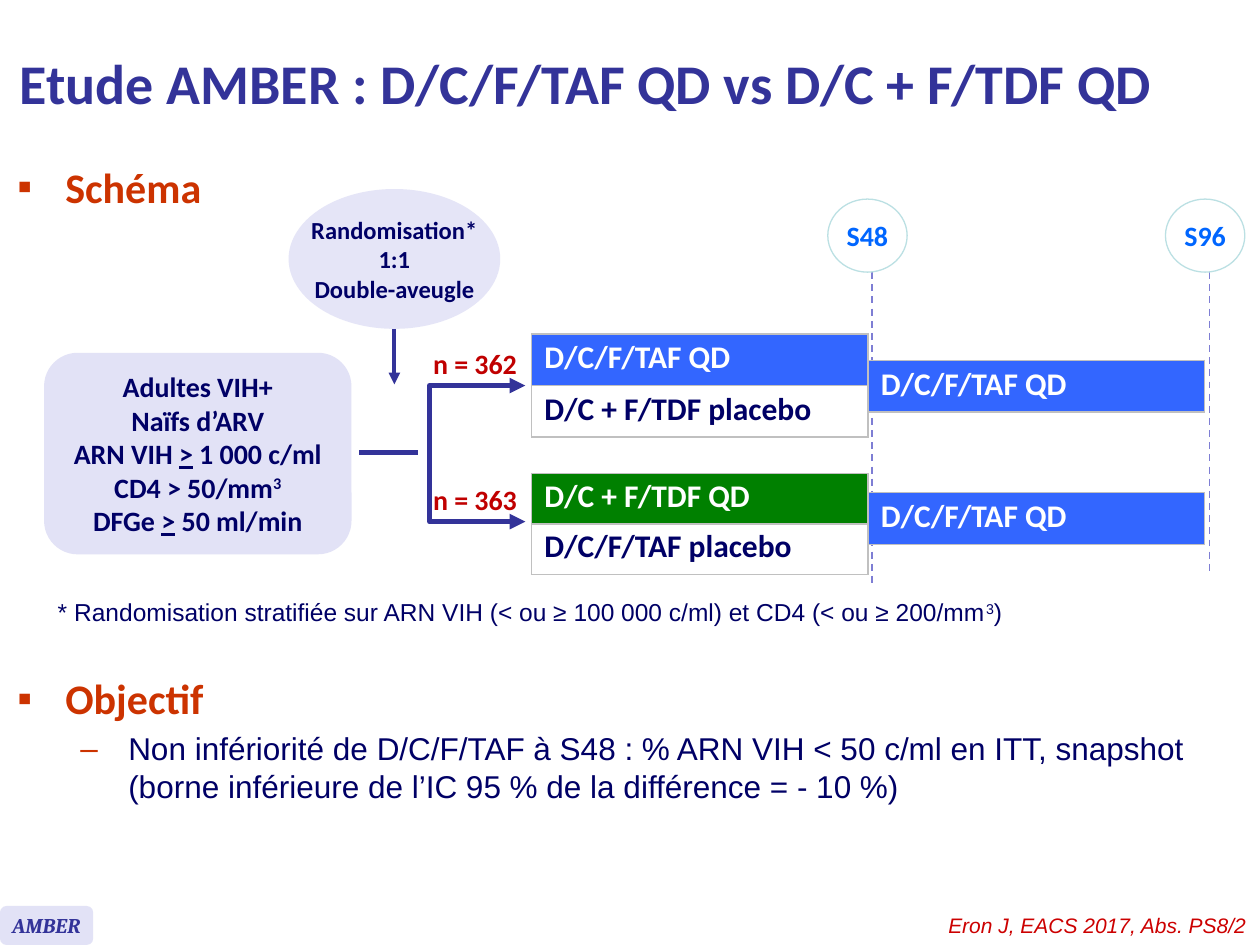
from lxml.etree import SubElement
from pptx import Presentation
from pptx.dml.color import RGBColor
from pptx.enum.dml import MSO_LINE
from pptx.enum.shapes import MSO_CONNECTOR, MSO_SHAPE
from pptx.enum.text import MSO_ANCHOR, PP_ALIGN
from pptx.oxml import parse_xml
from pptx.oxml.ns import nsdecls, qn
from pptx.util import Inches, Pt

NAVY, INK, LILAC = "333399", "000066", "E2E2F6"
BLUE, GREEN, WHITE = "3366FF", "008000", "FFFFFF"
RED, RUST = "C00000", "CC3300"
MID, LEFT = PP_ALIGN.CENTER, PP_ALIGN.LEFT


def tint(code):
    return RGBColor.from_string(code)


def box(*sides):
    return [Inches(side) for side in sides]


def bullet(para, sign, left):
    props = para._p.get_or_add_pPr()
    props.set("marL", str(Inches(left)))
    props.set("indent", str(Inches(-0.38)))
    hue = SubElement(props, qn("a:buClr"))
    SubElement(hue, qn("a:srgbClr"), val=RUST)
    SubElement(props, qn("a:buFont"), typeface="Arial")
    SubElement(props, qn("a:buChar"), char=sign)


def write(para, text, size=16, face="Calibri", color=INK, bold=True,
          slant=False, align=LEFT, space=None, before=None, sign=None, left=0):
    if sign:
        bullet(para, sign, left)
    para.alignment = align
    if space:
        para.line_spacing = space
    if before:
        para.space_before = Pt(before)
    for part in [text] if isinstance(text, str) else text:
        words, mark = (part, None) if isinstance(part, str) else part
        run = para.add_run()
        run.text = words
        font = run.font
        font.size, font.name = Pt(size), face
        font.bold, font.italic = bold, slant
        font.color.rgb = tint(color)
        if mark == "under":
            font.underline = True
        if mark == "super":
            run._r.get_or_add_rPr().set("baseline", "30000")


def label(slide, area, text, wrap=True, anchor=MSO_ANCHOR.TOP, **form):
    frame = slide.shapes.add_textbox(*box(*area)).text_frame
    frame.word_wrap, frame.vertical_anchor = wrap, anchor
    write(frame.paragraphs[0], text, **form)
    return frame


def shape(slide, kind, area, rows, fill=LILAC, edge=None, **form):
    item = slide.shapes.add_shape(kind, *box(*area))
    item.shadow.inherit = False
    item.fill.solid()
    item.fill.fore_color.rgb = tint(fill)
    if edge:
        item.line.color.rgb = tint(edge)
        item.line.width = Pt(0.75)
    else:
        item.line.fill.background()
    frame = item.text_frame
    frame.word_wrap, frame.vertical_anchor = False, MSO_ANCHOR.MIDDLE
    for i, row in enumerate(rows):
        para = frame.add_paragraph() if i else frame.paragraphs[0]
        write(para, row, **form)


def tips(item, *ends):
    line = item.line._get_or_add_ln()
    for end in ends:
        SubElement(line, qn("a:" + end), type="triangle")


def link(slide, start, stop, color=NAVY, width=3):
    item = slide.shapes.add_connector(
        MSO_CONNECTOR.STRAIGHT, *box(*start, *stop))
    item.line.color.rgb = tint(color)
    item.line.width = Pt(width)
    SubElement(item._element.spPr, qn("a:effectLst"))
    return item


def border(cell):
    props = cell._tc.get_or_add_tcPr()
    for i, side in enumerate("LRTB"):
        props.insert(i, parse_xml(
            f'<a:ln{side} {nsdecls("a")} w="12700"><a:solidFill>'
            f'<a:srgbClr val="C0C0C0"/></a:solidFill></a:ln{side}>'))


def arm(slide, x, y, w, h, rows, space=0.8):
    grid = slide.shapes.add_table(len(rows), 1, *box(x, y, w, h)).table
    for i, (text, fill) in enumerate(rows):
        grid.rows[i].height = Inches(h / len(rows))
        cell = grid.cell(i, 0)
        cell.vertical_anchor = MSO_ANCHOR.MIDDLE
        if fill:
            cell.fill.solid()
            cell.fill.fore_color.rgb = tint(fill)
        else:
            cell.fill.background()
        border(cell)
        write(cell.text_frame.paragraphs[0], text, size=18, space=space,
              color=WHITE if fill else INK)


def visit(slide, x, y, w, h, name, foot):
    axis = x + w / 2 + 0.035
    stem = link(slide, (axis, y + h), (axis, foot), "7E7ED4", 1)
    stem.line.dash_style = MSO_LINE.DASH
    shape(slide, MSO_SHAPE.OVAL, (x, y, w, h), [name], fill=WHITE,
          edge="BBE0E3", color="0066FF", align=MID)


def entry(slide, x, y, w, h):
    shape(slide, MSO_SHAPE.OVAL, (x + 1.94, y, 1.68, 1.11),
          ["Randomisation*", "1:1", "Double-aveugle"],
          fill="E5E5F7", size=14, align=MID)
    drop = link(slide, (x + 2.78, y + 1.11), (x + 2.78, y + 1.55), width=2.25)
    tips(drop, "tailEnd")
    shape(slide, MSO_SHAPE.ROUNDED_RECTANGLE, (x, y + h - 1.6, 2.44, 1.6), [
        "Adultes VIH+", "Naïfs d’ARV",
        ["ARN VIH ", (">", "under"), " 1 000 c/ml"],
        ["CD4 > 50/mm", ("3", "super")],
        ["DFGe ", (">", "under"), " 50 ml/min"]], align=MID)
    link(slide, (x + 2.5, y + 2.09), (x + 2.97, y + 2.09))
    top, low, back, tip = y + 1.56, y + 2.64, x + 3.06, x + w
    pen = slide.shapes.build_freeform(Inches(tip), Inches(top))
    pen.add_line_segments(
        [box(back, top), box(back, low), box(tip, low)], close=False)
    fork = pen.convert_to_shape()
    fork.shadow.inherit = False
    fork.fill.background()
    fork.line.color.rgb = tint(NAVY)
    fork.line.width = Pt(3)
    tips(fork, "headEnd", "tailEnd")
    for text, line in (("n = 362", top), ("n = 363", low)):
        label(slide, (back - 0.09, line - 0.36, 0.9, 0.37), text,
              wrap=False, color=RED, align=MID)


def arms(slide, x, y, w, h):
    half = w / 2
    arm(slide, x, y, half, 0.82,
        [("D/C/F/TAF QD", BLUE), ("D/C + F/TDF placebo", None)])
    arm(slide, x, y + h - 0.8, half, 0.8,
        [("D/C + F/TDF QD", GREEN), ("D/C/F/TAF placebo", None)], space=0.7)
    for down in (0.21, 1.26):
        arm(slide, x + half, y + down, half, 0.41, [("D/C/F/TAF QD", BLUE)])


def scheme(slide, x, y, w, h):
    label(slide, (x, y, 1.98, 0.63), "Schéma", size=24, color=RUST,
          sign="▪", left=0.38)
    for left, name, foot in ((6.57, "S48", 4.65), (9.25, "S96", 4.53)):
        visit(slide, left, y + 0.35, 0.63, 0.58, name, foot)
    entry(slide, x + 0.31, y + 0.27, 3.82, 2.9)
    arms(slide, x + 4.18, y + 1.42, 5.34, 1.91)
    label(slide, (x + 0.32, y + h - 0.34, 7.95, 0.34), [
        "* Randomisation stratifiée sur ARN VIH (< ou ≥ 100 000 c/ml) "
        "et CD4 (< ou ≥ 200/mm", ("3", "super"), ")"],
        size=14, face="Arial", bold=False)


def goal(slide, x, y, w, h):
    frame = label(slide, (x, y, w, h), "Objectif", size=24, color=RUST,
                  sign="▪", left=0.38)
    write(frame.add_paragraph(),
          "Non infériorité de D/C/F/TAF à S48 : % ARN VIH < 50 c/ml en ITT, "
          "snapshot (borne inférieure de l’IC 95 % de la différence = - 10 %)",
          size=18, face="Arial", bold=False, before=3.6, sign="–", left=0.88)


def footer(slide, x, y, w, h):
    shape(slide, MSO_SHAPE.ROUNDED_RECTANGLE, (x, y, 0.74, h), ["AMBER"],
          size=12, face="Cambria", color=NAVY, slant=True, align=MID)
    label(slide, (x + w - 4.16, y, 4.16, h), "Eron J, EACS 2017, Abs. PS8/2",
          size=12, face="Arial", color="CC0000", bold=False, slant=True,
          align=PP_ALIGN.RIGHT)


def main():
    deck = Presentation()
    deck.slide_width, deck.slide_height = box(10, 7.5)
    slide = deck.slides.add_slide(deck.slide_layouts[6])
    label(slide, (0.06, 0.05, 9.55, 1.21),
          "Etude AMBER : D/C/F/TAF QD vs D/C + F/TDF QD",
          size=32, color=NAVY, anchor=MSO_ANCHOR.MIDDLE)
    scheme(slide, 0.04, 1.23, 9.9, 3.8)
    goal(slide, 0.04, 5.29, 9.8, 1.29)
    footer(slide, 0, 7.19, 9.99, 0.31)
    deck.save("out.pptx")


if __name__ == "__main__":
    main()
